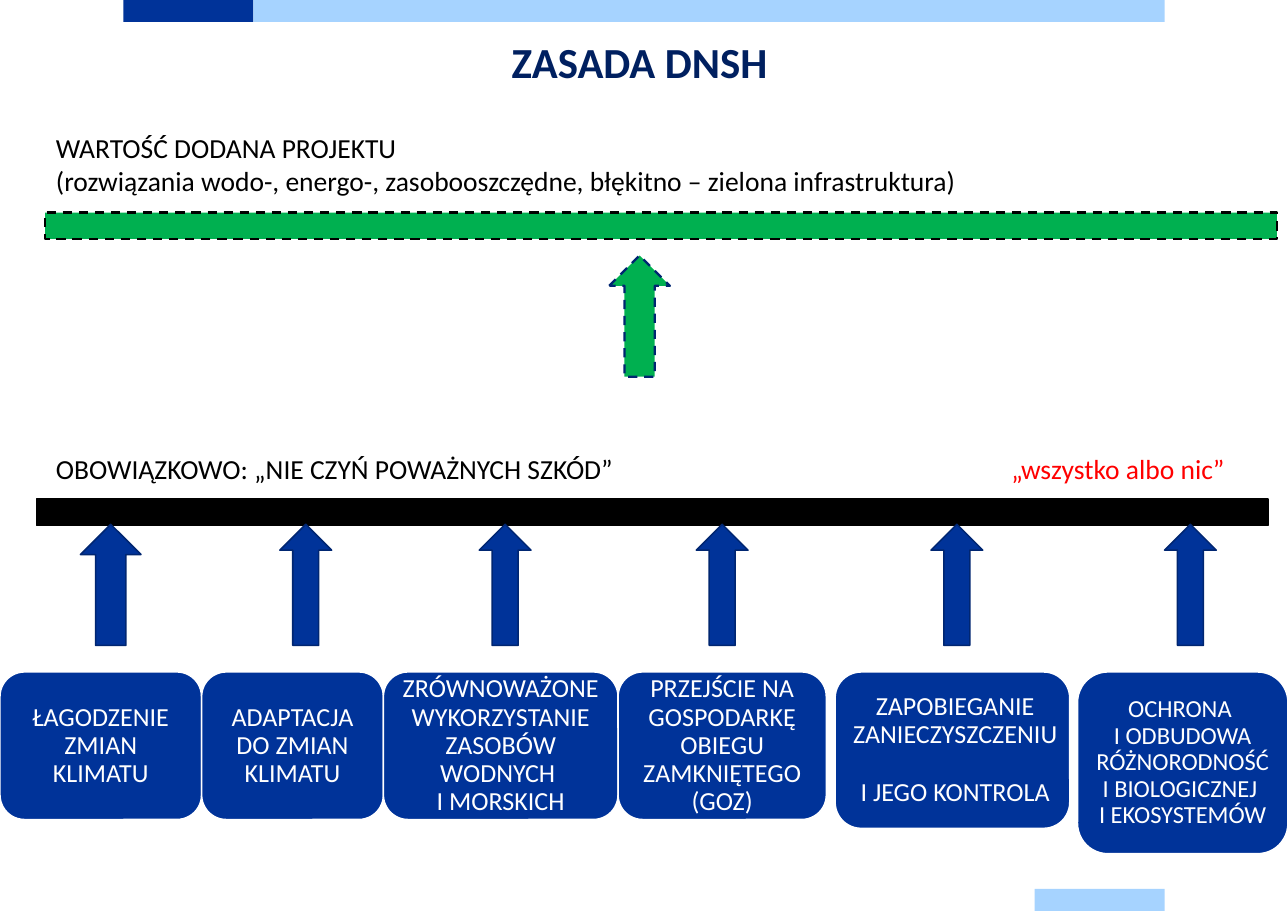
from dataclasses import dataclass

from pptx import Presentation
from pptx.dml.color import RGBColor
from pptx.enum.dml import MSO_LINE
from pptx.enum.shapes import MSO_SHAPE as Shape
from pptx.enum.text import MSO_ANCHOR as Anchor, MSO_AUTO_SIZE as AutoSize, PP_ALIGN as Align
from pptx.util import Pt


@dataclass(frozen=True)
class Theme:
    font: str = "Calibri"
    blue: str = "003399"
    light_blue: str = "A6D3FF"
    dark_blue: str = "002671"
    title_blue: str = "002060"
    green: str = "00B050"
    red: str = "FF0000"
    black: str = "000000"
    white: str = "FFFFFF"
    title_size: int = 28
    label_size: int = 18
    goal_size: int = 17
    small_goal_size: int = 16


THEME = Theme()
TITLE = "ZASADA DNSH"

# left, top, width, height, colour
EDGE_BARS = [
    (80.64, 0, 84.96, 14.4, THEME.blue),
    (165.6, 0, 595.44, 14.4, THEME.light_blue),
    (676.08, 581.04, 84.96, 14.4, THEME.light_blue),
]

# left, top, width, height, colour, lines
LABELS = [
    (29.52, 82.08, 793.44, 51.12, THEME.black, [
        "WARTOŚĆ DODANA PROJEKTU",
        "(rozwiązania wodo-, energo-, zasobooszczędne, błękitno – zielona infrastruktura)",
    ]),
    (29.52, 291.6, 408.24, 28.8, THEME.black, ["OBOWIĄZKOWO: „NIE CZYŃ POWAŻNYCH SZKÓD”"]),
    (653.76, 291.6, 157.68, 28.8, THEME.red, ["„wszystko albo nic”"]),
]

# lines, left, width, height, text size, right inset, arrow centre, arrow width
GOALS = [
    (["ŁAGODZENIE ZMIAN KLIMATU"], 0, 131.76, 96.48, THEME.goal_size, 5, 72.36, 39.6),
    (["ADAPTACJA DO ZMIAN KLIMATU"], 131.76, 118.8, 96.48, THEME.goal_size, 5, 199.8, 33.84),
    (["ZRÓWNOWAŻONE WYKORZYSTANIE ZASOBÓW WODNYCH ", "I MORSKICH"],
     250.56, 153.36, 96.48, THEME.goal_size, 5, 330.12, 33.84),
    (["PRZEJŚCIE NA GOSPODARKĘ OBIEGU ZAMKNIĘTEGO (GOZ)"],
     403.92, 136.08, 96.48, THEME.goal_size, 5, 471.96, 33.84),
    (["ZAPOBIEGANIE ZANIECZYSZCZENIU ", "I JEGO KONTROLA"],
     545.76, 153.36, 102.24, THEME.goal_size, 1.4, 625.32, 33.84),
    (["OCHRONA ", "I ODBUDOWA RÓŻNORODNOŚĆI BIOLOGICZNEJ ", "I EKOSYSTEMÓW"],
     704.16, 137.52, 118.8, THEME.small_goal_size, 5, 777.96, 33.84),
]
GOAL_TOP = 439.2
ARROW_TOP, ARROW_HEIGHT = 342.72, 79.2
BEAM_WIDTH, BEAM_HEIGHT = 804.96, 17.28


def color(value):
    return RGBColor.from_string(value)


def add_box(slide, kind, frame, fill, line=None, weight=1, dashed=False):
    box = slide.shapes.add_shape(kind, *map(Pt, frame))
    box.shadow.inherit = False
    box.fill.solid()
    box.fill.fore_color.rgb = color(fill)
    if line is None:
        box.line.fill.background()
    else:
        box.line.color.rgb = color(line)
        box.line.width = Pt(weight)
        if dashed:
            box.line.dash_style = MSO_LINE.DASH
    return box


def add_run(para, text, size, shade, bold=False):
    span = para.add_run()
    span.text = text
    span.font.name = THEME.font
    span.font.size = Pt(size)
    span.font.bold = bold
    span.font.color.rgb = color(shade)


def set_title(slide):
    title = slide.shapes.title
    title.left, title.top, title.width, title.height = map(Pt, (205.2, 19.44, 425.52, 41.04))
    frame = title.text_frame
    frame.word_wrap = True
    frame.auto_size = AutoSize.SHAPE_TO_FIT_TEXT
    frame.vertical_anchor = Anchor.TOP
    para = frame.paragraphs[0]
    para.alignment = Align.CENTER
    add_run(para, TITLE, THEME.title_size, THEME.title_blue, bold=True)


def add_label(slide, left, top, width, height, shade, lines):
    frame = slide.shapes.add_textbox(*map(Pt, (left, top, width, height))).text_frame
    frame.word_wrap = True
    frame.auto_size = AutoSize.SHAPE_TO_FIT_TEXT
    for index, line in enumerate(lines):
        para = frame.add_paragraph() if index else frame.paragraphs[0]
        add_run(para, line, THEME.label_size, shade)


def add_goal(slide, lines, left, width, height, size, right_inset, center, arrow_width):
    """Add a rounded goal box and the arrow that rises from it."""
    box = add_box(slide, Shape.ROUNDED_RECTANGLE, (left, GOAL_TOP, width, height),
                  THEME.blue, THEME.white)
    frame = box.text_frame
    frame.word_wrap = True
    frame.vertical_anchor = Anchor.MIDDLE
    frame.margin_left = frame.margin_top = frame.margin_bottom = Pt(5)
    frame.margin_right = Pt(right_inset)
    para = frame.paragraphs[0]
    para.alignment = Align.CENTER
    para.line_spacing = 0.9
    for index, line in enumerate(lines):
        if index:
            para.add_line_break()
        add_run(para, line, size, THEME.white)
    add_box(slide, Shape.UP_ARROW,
            (center - arrow_width / 2, ARROW_TOP, arrow_width, ARROW_HEIGHT),
            THEME.blue, THEME.dark_blue)


def main():
    deck = Presentation()
    deck.slide_width, deck.slide_height = Pt(841.68), Pt(595.44)
    slide = deck.slides.add_slide(deck.slide_layouts[5])
    for *frame, fill in EDGE_BARS:
        add_box(slide, Shape.RECTANGLE, frame, fill)
    set_title(slide)
    add_box(slide, Shape.RECTANGLE, (23.76, 326.16, BEAM_WIDTH, BEAM_HEIGHT),
            THEME.black, THEME.black)
    add_box(slide, Shape.RECTANGLE, (29.52, 138.96, BEAM_WIDTH, BEAM_HEIGHT),
            THEME.green, THEME.black, 1.5, dashed=True)
    add_box(slide, Shape.UP_ARROW, (398.16, 167.04, 39.6, ARROW_HEIGHT),
            THEME.green, THEME.dark_blue, 1.5, dashed=True)
    for label in LABELS:
        add_label(slide, *label)
    for goal in GOALS:
        add_goal(slide, *goal)
    deck.save("out.pptx")


if __name__ == "__main__":
    main()
